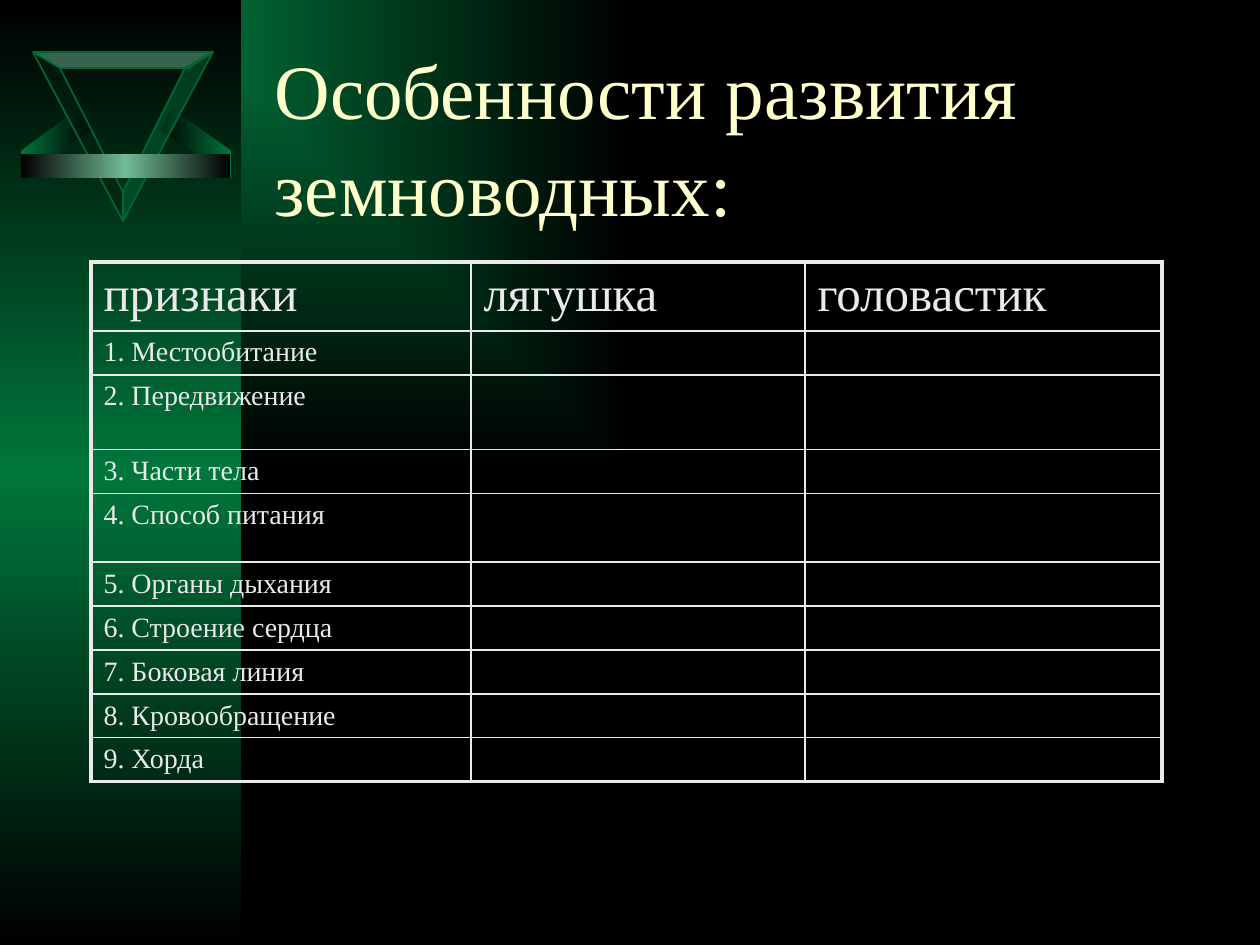
from lxml import etree
from pptx import Presentation
from pptx.dml.color import RGBColor
from pptx.enum.shapes import MSO_SHAPE as SHAPE
from pptx.enum.text import MSO_ANCHOR as ANCHOR
from pptx.oxml.ns import qn
from pptx.util import Pt

PX = 914400 / 126
FONT = "Times New Roman"
COLORS = {
    "black": "000000", "green": "00763B", "mint": "71BB96", "edge": "006633",
    "deep": "002010", "title": "FFFFCC", "text": "EAEAEA",
}


def px(length):
    return round(length * PX)


def set_gradient(owner, element, stops, angle=None):
    """Give owner evenly spaced stops, linear or spreading from the top left corner."""
    owner.fill.gradient()
    grad = element.find(".//" + qn("a:gradFill"))
    for child in list(grad):
        grad.remove(child)
    stop_list = etree.SubElement(grad, qn("a:gsLst"))
    for i, name in enumerate(stops):
        stop = etree.SubElement(stop_list, qn("a:gs"), pos=str(100000 * i // (len(stops) - 1)))
        etree.SubElement(stop, qn("a:srgbClr"), val=COLORS[name])
    if angle is None:
        spread = etree.SubElement(grad, qn("a:path"), path="rect")
        etree.SubElement(spread, qn("a:fillToRect"), r="100000", b="100000")
    else:
        etree.SubElement(grad, qn("a:lin"), ang=str(angle * 60000), scaled="0")


prs = Presentation()
prs.slide_width, prs.slide_height = px(1260), px(945)
slide = prs.slides.add_slide(prs.slide_layouts[6])
shapes = slide.shapes

# Background and left band
set_gradient(slide.background, slide._element, ["green", "black"])
band = shapes.add_shape(SHAPE.RECTANGLE, 0, 0, px(241), px(945))
set_gradient(band, band._element, ["black", "green", "black"], 90)
band.line.fill.background()
band.shadow.inherit = False

# Emblem: mirrored wings
right_wing = [(231, 151), (231, 178), (161, 130), (161, 132), (171, 108)]
left_wing = [(252 - x, y) for x, y in right_wing]
for points, stops in [(right_wing, ["black", "green"]), (left_wing, ["green", "black"])]:
    builder = shapes.build_freeform(*points[0], scale=PX)
    builder.add_line_segments(points[1:], close=True)
    wing = builder.convert_to_shape()
    set_gradient(wing, wing._element, stops, 0)
    wing.line.fill.background()
    wing.shadow.inherit = False

# Emblem: half-transparent sides of the triangle
sides = [
    ([(123, 221), (123, 192), (60, 68), (33, 52)], "deep"),
    ([(33, 52), (60, 68), (189, 68), (213, 52)], "mint"),
    ([(123, 221), (123, 192), (185, 68), (213, 52)], "edge"),
]
for points, color in sides:
    builder = shapes.build_freeform(*points[0], scale=PX)
    builder.add_line_segments(points[1:], close=True)
    side = builder.convert_to_shape()
    side.fill.solid()
    side.fill.fore_color.rgb = RGBColor.from_string(COLORS[color])
    fill_color = side._element.spPr.find(qn("a:solidFill"))[0]
    etree.SubElement(fill_color, qn("a:alpha"), val="50000")
    side.line.color.rgb = RGBColor.from_string(COLORS["edge"])
    side.line.width = Pt(1)
    side.shadow.inherit = False

# Emblem: crossbar
bar = shapes.add_shape(SHAPE.RECTANGLE, px(21), px(154), px(209), px(24))
set_gradient(bar, bar._element, ["black", "mint", "black"], 0)
bar.line.fill.background()
bar.shadow.inherit = False

# Title
title = shapes.add_textbox(px(262), px(32), px(976), px(199)).text_frame
title.word_wrap = True
title.vertical_anchor = ANCHOR.MIDDLE
title.margin_top = px(14)
title.text = "Особенности развития земноводных:"
title.paragraphs[0].line_spacing = 1.05
title_font = title.paragraphs[0].runs[0].font
title_font.name, title_font.size = FONT, Pt(44)
title_font.color.rgb = RGBColor.from_string(COLORS["title"])

# Comparison table
headings = ["признаки", "лягушка", "головастик"]
features = [
    "Местообитание", "Передвижение", "Части тела", "Способ питания", "Органы дыхания",
    "Строение сердца", "Боковая линия", "Кровообращение", "Хорда",
]
rows = [headings] + [[f"{n}. {feature}", "", ""] for n, feature in enumerate(features, 1)]
widths = [380, 334, 357]
heights = [67, 44, 75, 43, 69, 44, 44, 44, 43, 44]
table = shapes.add_table(len(rows), len(widths), px(91), px(262),
                         px(sum(widths)), px(sum(heights))).table
table.first_row = table.horz_banding = False
for column, width in zip(table.columns, widths):
    column.width = px(width)
for row, height in zip(table.rows, heights):
    row.height = px(height)

for r, texts in enumerate(rows):
    for c, text in enumerate(texts):
        cell = table.cell(r, c)
        cell.margin_top, cell.margin_bottom = px(6), px(4)
        cell.text_frame.text = text
        paragraph = cell.text_frame.paragraphs[0]
        size = 28 if r == 0 else 16
        for run in paragraph.runs:
            run.font.name, run.font.size = FONT, Pt(size)
            run.font.color.rgb = RGBColor.from_string(COLORS["text"])
        if not text:
            etree.SubElement(paragraph._p, qn("a:endParaRPr"), sz=str(size * 100))
        # Thick outer frame, thin inner lines
        outer = {"L": c == 0, "R": c == len(widths) - 1, "T": r == 0, "B": r == len(rows) - 1}
        cell_props = cell._tc.get_or_add_tcPr()
        for edge, is_outer in outer.items():
            border = etree.SubElement(cell_props, qn("a:ln" + edge),
                                      w=str(Pt(2.25 if is_outer else 1)))
            border_fill = etree.SubElement(border, qn("a:solidFill"))
            etree.SubElement(border_fill, qn("a:srgbClr"), val=COLORS["text"])
        cell.fill.background()

prs.save("out.pptx")
